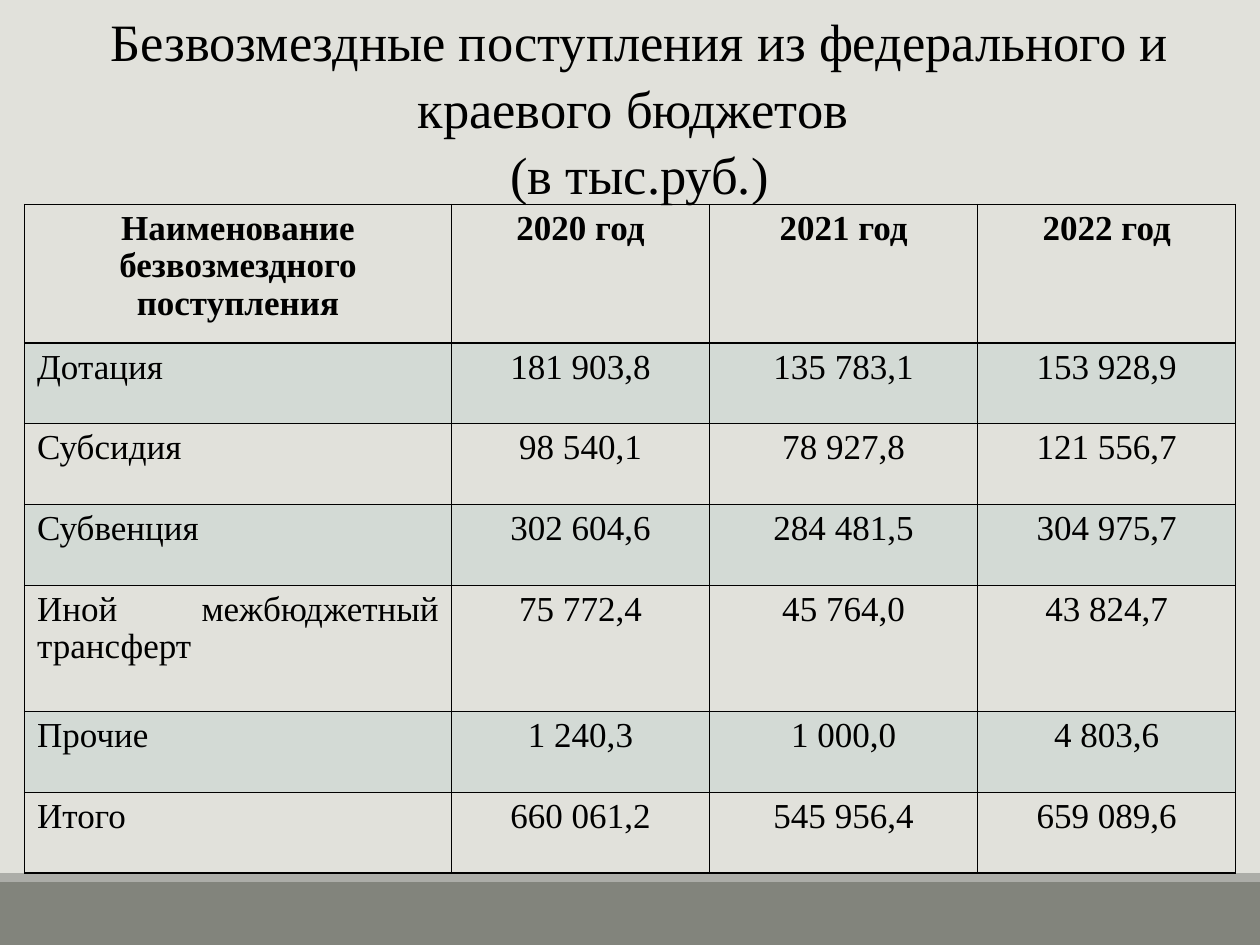
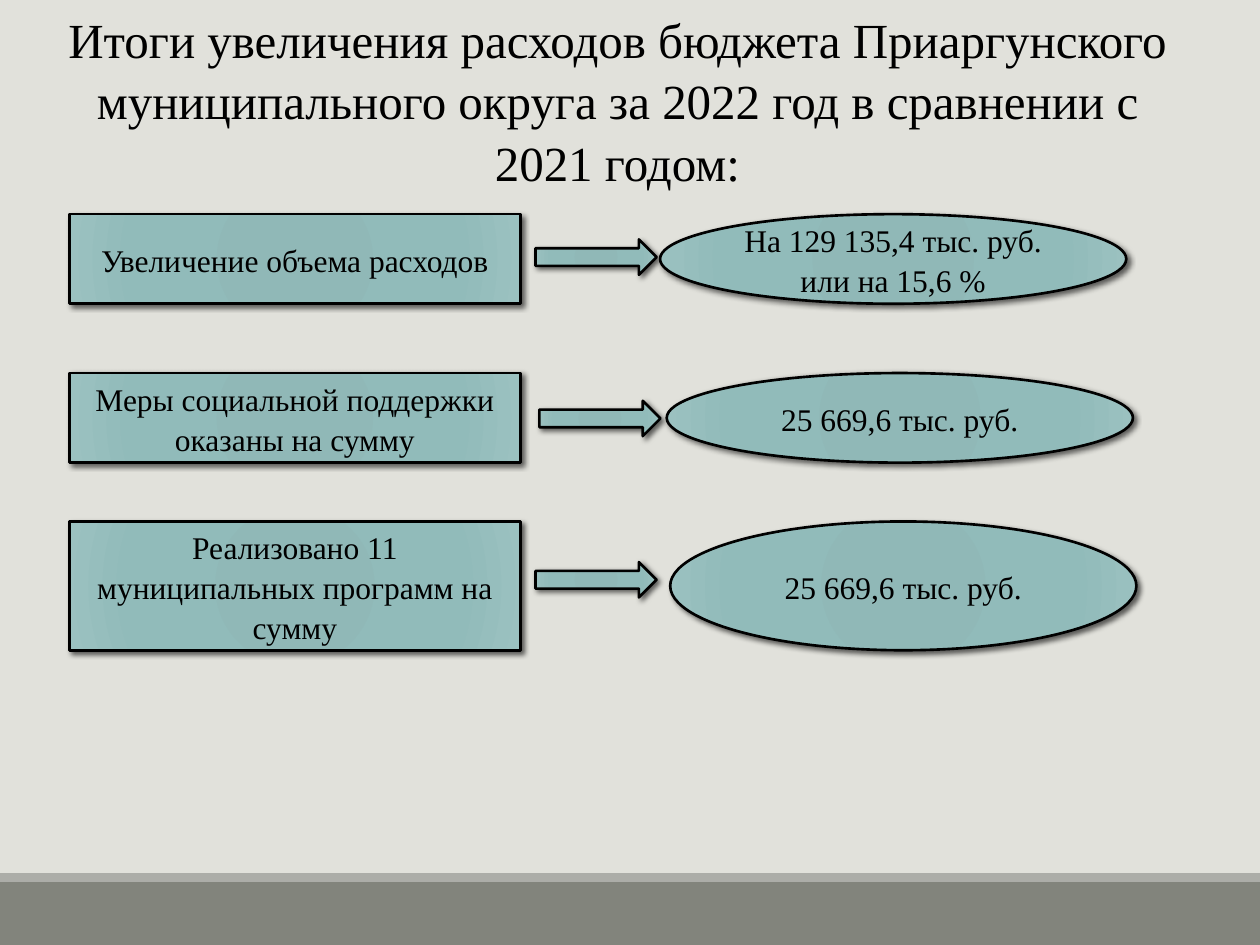
from pptx import Presentation
from pptx.dml.color import RGBColor
from pptx.enum.shapes import MSO_SHAPE as Shape
from pptx.enum.text import MSO_ANCHOR as Anchor, MSO_AUTO_SIZE as AutoSize, PP_ALIGN as Align
from pptx.oxml import parse_xml
from pptx.oxml.ns import nsdecls, qn
from pptx.util import Pt

BACKGROUND = RGBColor(0xE1, 0xE1, 0xDB)
BAND = RGBColor(0x82, 0x84, 0x7C)
BAND_EDGE = RGBColor(0xAC, 0xAD, 0xA8)
BLACK = RGBColor(0, 0, 0)
ROW_TINT = RGBColor(0x9D, 0xBF, 0xBE)
GRADIENT_STOPS = [
    (0, RGBColor(0x8E, 0xB7, 0xB6)),
    (34, RGBColor(0x90, 0xB8, 0xB7)),
    (70, RGBColor(0x91, 0xBB, 0xBA)),
    (100, RGBColor(0x9B, 0xC1, 0xC0)),
]

FONT = "Times New Roman"
SLIDE_WIDTH, SLIDE_HEIGHT = 720, 540
TITLE_FRAME = {"word_wrap": True, "auto_size": AutoSize.NONE, "vertical_anchor": Anchor.TOP}
CENTRED = {"alignment": Align.CENTER, "line_spacing": 1.05}
CELL_CENTRED = {"alignment": Align.CENTER, "line_spacing": 0.96}
CELL_JUSTIFIED = {"alignment": Align.JUSTIFY, "line_spacing": 0.96}
PLAIN_TABLE = {"first_row": False, "horz_banding": False}

COLUMN_WIDTHS = [244, 147.5, 153.2, 147.5]
HEADER_HEIGHT, ROW_HEIGHT, TALL_ROW_HEIGHT = 79.2, 46.2, 72
TALL_ROW = 4
RECEIPTS = [
    ["Наименование безвозмездного поступления", "2020 год", "2021 год", "2022 год"],
    ["Дотация", "181 903,8", "135 783,1", "153 928,9"],
    ["Субсидия", "98 540,1", "78 927,8", "121 556,7"],
    ["Субвенция", "302 604,6", "284 481,5", "304 975,7"],
    ["Иной межбюджетный трансферт", "75 772,4", "45 764,0", "43 824,7"],
    ["Прочие", "1 240,3", "1 000,0", "4 803,6"],
    ["Итого", "660 061,2", "545 956,4", "659 089,6"],
]

RESULTS = [
    ("Увеличение объема расходов", "На 129 135,4 тыс. руб. или на 15,6 %",
     122.4, 51.2, (306, 136.8), 377.2),
    ("Меры социальной поддержки оказаны на сумму", "25 669,6 тыс. руб.",
     213.2, 51.2, (308.2, 229), 381),
    ("Реализовано 11 муниципальных программ на сумму", "25 669,6 тыс. руб.",
     298, 73.6, (306, 321.2), 383),
]


def set_values(target, values):
    for name, value in values.items():
        setattr(target, name, value)


def write(text_frame, text, size, paragraph_format, bold=False):
    text_frame.text = text
    for paragraph in text_frame.paragraphs:
        set_values(paragraph, paragraph_format)
        for run in paragraph.runs:
            set_values(run.font, {"name": FONT, "size": Pt(size), "bold": bold})
            run.font.color.rgb = BLACK


def add_band(slide, master, top, height, color):
    band = slide.shapes.add_shape(Shape.RECTANGLE, 0, Pt(top), Pt(SLIDE_WIDTH), Pt(height))
    band.shadow.inherit = False
    band.fill.solid()
    band.fill.fore_color.rgb = color
    band.line.fill.background()
    master.shapes.element.append(band.element)


def style_master(presentation, slide):
    master = presentation.slide_master
    master.background.fill.solid()
    master.background.fill.fore_color.rgb = BACKGROUND
    add_band(slide, master, 504, 36, BAND)
    add_band(slide, master, 499, 5, BAND_EDGE)


def add_title(slide, text, left, width, height, size):
    title = slide.shapes.title
    set_values(title, {"left": Pt(left), "top": 0, "width": Pt(width), "height": Pt(height)})
    set_values(title.text_frame, TITLE_FRAME)
    write(title.text_frame, text, size, CENTRED)


def add_borders(cell):
    properties = cell._tc.get_or_add_tcPr()
    for index, side in enumerate(("lnL", "lnR", "lnT", "lnB")):
        properties.insert(index, parse_xml(
            f'<a:{side} {nsdecls("a")} w="{Pt(0.75)}"><a:solidFill>'
            f'<a:srgbClr val="{BLACK}"/></a:solidFill></a:{side}>'))


def fill_cell(cell, tinted):
    if not tinted:
        cell.fill.background()
        return
    cell.fill.solid()
    cell.fill.fore_color.rgb = ROW_TINT
    color = cell._tc.tcPr.find(".//" + qn("a:srgbClr"))
    color.append(parse_xml(f'<a:alpha {nsdecls("a")} val="20000"/>'))


def add_receipts_table(slide):
    heights = [HEADER_HEIGHT] + [ROW_HEIGHT] * (len(RECEIPTS) - 1)
    heights[TALL_ROW] = TALL_ROW_HEIGHT
    table = slide.shapes.add_table(
        len(RECEIPTS), len(COLUMN_WIDTHS), Pt(14), Pt(116.8),
        Pt(sum(COLUMN_WIDTHS)), Pt(sum(heights))).table
    set_values(table, PLAIN_TABLE)
    for column, width in zip(table.columns, COLUMN_WIDTHS):
        column.width = Pt(width)
    for row_index, texts in enumerate(RECEIPTS):
        table.rows[row_index].height = Pt(heights[row_index])
        for column_index, text in enumerate(texts):
            cell = table.cell(row_index, column_index)
            is_header = row_index == 0
            is_name = column_index == 0 and not is_header
            write(cell.text_frame, text, 20,
                  CELL_JUSTIFIED if is_name else CELL_CENTRED, is_header)
            fill_cell(cell, row_index % 2 == 1)
            add_borders(cell)


def fill_gradient(shape):
    shape.fill.gradient()
    properties = shape.element.spPr
    stops = "".join(
        f'<a:gs pos="{position * 1000}"><a:srgbClr val="{color}"/></a:gs>'
        for position, color in GRADIENT_STOPS)
    properties.replace(properties.find(qn("a:gradFill")), parse_xml(
        f'<a:gradFill {nsdecls("a")}><a:gsLst>{stops}</a:gsLst><a:path path="circle">'
        '<a:fillToRect l="100000" t="100000" r="100000" b="100000"/></a:path></a:gradFill>'))


def add_shadow(shape):
    shape.shadow.inherit = False
    shape.element.spPr.find(qn("a:effectLst")).append(parse_xml(
        f'<a:outerShdw {nsdecls("a")} blurRad="{Pt(3)}" dist="{Pt(2)}" dir="2700000" '
        f'rotWithShape="0"><a:srgbClr val="{BLACK}"><a:alpha val="60000"/></a:srgbClr>'
        '</a:outerShdw>'))


def add_figure(slide, kind, left, top, width, height, text=""):
    shape = slide.shapes.add_shape(kind, Pt(left), Pt(top), Pt(width), Pt(height))
    fill_gradient(shape)
    shape.line.color.rgb = BLACK
    shape.line.width = Pt(1.5)
    add_shadow(shape)
    if text:
        shape.text_frame.vertical_anchor = Anchor.MIDDLE
        write(shape.text_frame, text, 18, CENTRED)


def add_result(slide, measure, amount, top, height, arrow, ellipse_left):
    add_figure(slide, Shape.RECTANGLE, 39.6, top, 257.8, height, measure)
    add_figure(slide, Shape.RIGHT_ARROW, *arrow, 69.2, 20.2)
    add_figure(slide, Shape.OVAL, ellipse_left, top, 266.4, height, amount)


def main():
    presentation = Presentation()
    set_values(presentation, {"slide_width": Pt(SLIDE_WIDTH), "slide_height": Pt(SLIDE_HEIGHT)})
    title_only = presentation.slide_layouts[5]

    receipts = presentation.slides.add_slide(title_only)
    style_master(presentation, receipts)
    add_title(receipts, "Безвозмездные поступления из федерального и краевого бюджетов \v"
              "(в тыс.руб.)", 36.8, 657.4, 116.6, 30)
    add_receipts_table(receipts)

    results = presentation.slides.add_slide(title_only)
    add_title(results, "Итоги увеличения расходов бюджета Приаргунского муниципального "
              "округа за 2022 год в сравнении с 2021 годом:", 25.2, 655.2, 108.8, 28)
    for result in RESULTS:
        add_result(results, *result)

    presentation.save("out.pptx")


if __name__ == "__main__":
    main()
